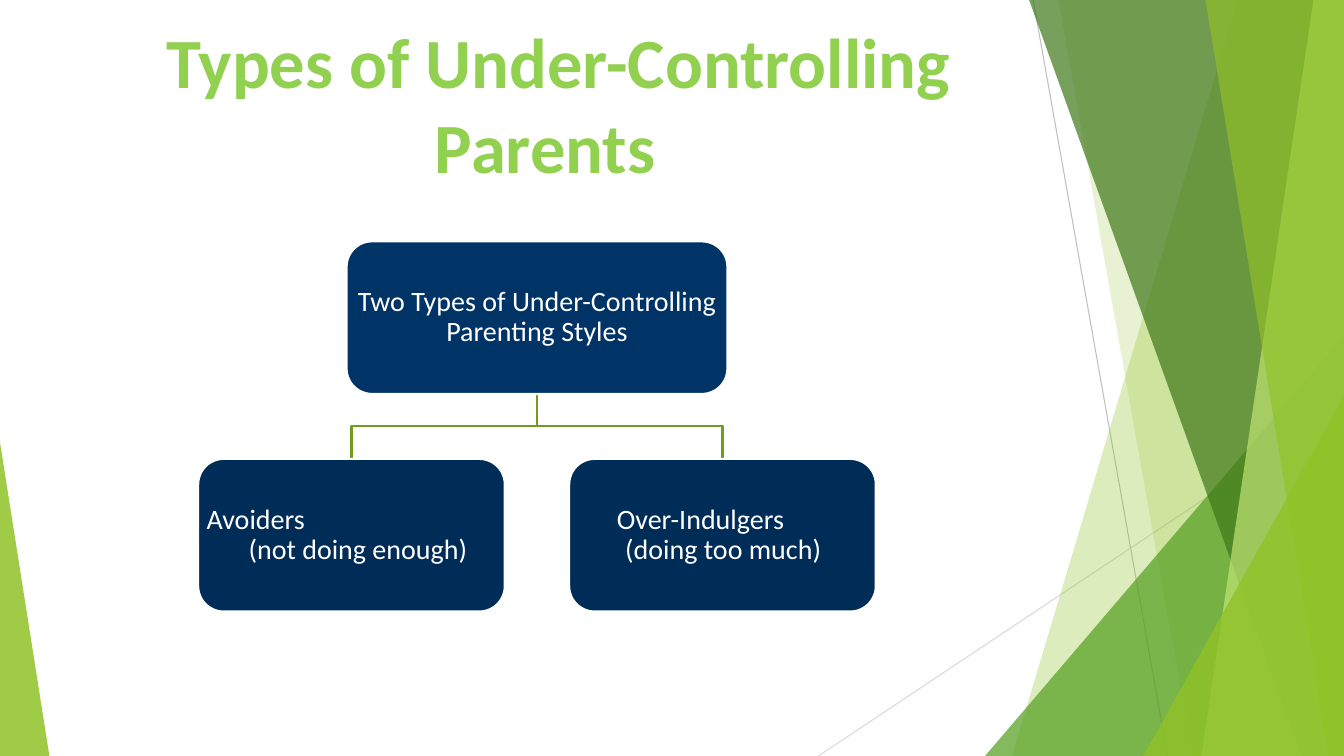
from lxml.etree import SubElement
from pptx import Presentation
from pptx.dml.color import RGBColor
from pptx.enum.shapes import MSO_CONNECTOR, MSO_SHAPE
from pptx.enum.text import MSO_ANCHOR, MSO_AUTO_SIZE, PP_ALIGN
from pptx.oxml.ns import qn
from pptx.util import Pt

WIDTH, HEIGHT = 960, 540
GREEN = "90C226"


def colour(value):
    return RGBColor.from_string(value)


def assign(target, values):
    for name, value in values.items():
        setattr(target, name, value)


class SlideBuilder:
    title_font = {"name": "Calibri", "size": Pt(50.4), "bold": True}
    label_font = {"name": "Calibri", "size": Pt(20), "bold": False}

    def __init__(self, page):
        self.page = page
        self.shapes = page.shapes

    def paint(self, shape, fill, opacity=100):
        shape.shadow.inherit = False
        shape.fill.solid()
        shape.fill.fore_color.rgb = colour(fill)
        shape.line.fill.background()
        if opacity < 100:
            tint = shape._element.spPr.find(qn("a:solidFill"))[0]
            SubElement(tint, qn("a:alpha"), val=str(opacity * 1000))

    def outline(self, points, close):
        corners = [(Pt(x), Pt(y)) for x, y in points]
        builder = self.shapes.build_freeform(*corners[0], scale=1.0)
        builder.add_line_segments(corners[1:], close=close)
        return builder.convert_to_shape()

    def band(self, top, bottom, fill, opacity):
        points = [(top, 0), (WIDTH, 0), (WIDTH, HEIGHT), (bottom, HEIGHT)]
        self.paint(self.outline(points, True), fill, opacity)

    def triangle(self, left, top, width, apex, fill, opacity):
        shape = self.shapes.add_shape(
            MSO_SHAPE.ISOSCELES_TRIANGLE, Pt(left), Pt(top), Pt(width), Pt(HEIGHT - top))
        shape.adjustments[0] = apex
        self.paint(shape, fill, opacity)

    def hairline(self, start, end, stroke):
        line = self.shapes.add_connector(
            MSO_CONNECTOR.STRAIGHT, *(Pt(value) for value in start + end))
        line.line.color.rgb = colour(stroke)
        line.line.width = Pt(0.75)
        SubElement(line._element.spPr, qn("a:effectLst"))

    def branch(self, points):
        shape = self.outline(points, False)
        shape.shadow.inherit = False
        shape.fill.background()
        shape.line.color.rgb = colour("739B1E")
        shape.line.width = Pt(1.5)

    def add_text(self, para, text, font, fill):
        span = para.add_run()
        span.text = text
        assign(span.font, font)
        span.font.color.rgb = colour(fill)

    def title(self, text, left, top, width, height, first_indent):
        box = self.shapes.title
        self.shapes._spTree.append(box._element)
        assign(box, {"left": Pt(left), "top": Pt(top),
                     "width": Pt(width), "height": Pt(height)})
        assign(box.text_frame, {"word_wrap": True, "auto_size": MSO_AUTO_SIZE.NONE,
                                "vertical_anchor": MSO_ANCHOR.TOP})
        para = box.text_frame.paragraphs[0]
        para.alignment = PP_ALIGN.CENTER
        para._p.get_or_add_pPr().set("indent", str(Pt(first_indent)))
        self.add_text(para, text, self.title_font, "92D050")

    def node(self, left, top, width, height, fill, lines, align):
        box = self.shapes.add_shape(
            MSO_SHAPE.FLOWCHART_ALTERNATE_PROCESS, Pt(left), Pt(top), Pt(width), Pt(height))
        self.paint(box, fill)
        box.line.color.rgb = colour("FFFFFF")
        box.line.width = Pt(1.5)
        frame = box.text_frame
        assign(frame, {"word_wrap": True, "vertical_anchor": MSO_ANCHOR.MIDDLE})
        assign(frame, {f"margin_{side}": Pt(0.72)
                       for side in ("left", "top", "right", "bottom")})
        for index, (text, indent) in enumerate(lines):
            para = frame.add_paragraph() if index else frame.paragraphs[0]
            assign(para, {"alignment": align, "line_spacing": 0.9})
            para._p.get_or_add_pPr().set("marL", str(Pt(indent)))
            self.add_text(para, text, self.label_font, "FFFFFF")


def main():
    deck = Presentation()
    deck.slide_width, deck.slide_height = Pt(WIDTH), Pt(HEIGHT)
    slide = SlideBuilder(deck.slides.add_slide(deck.slide_layouts[5]))

    slide.hairline((738, 0), (834, HEIGHT), "BFBFBF")
    slide.hairline((WIDTH, 290), (584.6, HEIGHT), "D9D9D9")
    slide.band(884.2, 722.9, GREEN, 30)
    slide.band(756, 851.8, GREEN, 20)
    slide.triangle(703.6, 240, 256.4, 1, "54A021", 72)
    slide.band(735.1, 929.5, "3F7819", 70)
    slide.band(938.2, 858.2, "C0E474", 70)
    slide.band(861.1, 949, GREEN, 65)
    slide.triangle(816.6, 283, 143.4, 1, GREEN, 80)
    slide.triangle(0, 316, 35.3, 0, GREEN, 85)

    slide.title("Types of Under-Controlling Parents", 30.2, 9.4, 718.6, 126, 18.8)

    root_centre, root_top, root_width, node_height = 383.6, 172.4, 272, 109
    child_top, child_width, child_offset = 327.8, 219, 132.5
    root_bottom = root_top + node_height
    middle = (root_bottom + child_top) / 2
    children = [
        (root_centre - child_offset, [("Avoiders", 0), ("(not doing enough)", 30)]),
        (root_centre + child_offset, [("Over-Indulgers", 28), ("(doing too much)", 34)]),
    ]
    for centre, lines in children:
        slide.branch([(root_centre, root_bottom), (root_centre, middle),
                      (centre, middle), (centre, child_top)])
    slide.node(root_centre - root_width / 2, root_top, root_width, node_height, "003366",
               [("Two Types of Under-Controlling Parenting Styles", 0)], PP_ALIGN.CENTER)
    for centre, lines in children:
        slide.node(centre - child_width / 2, child_top, child_width, node_height, "002C58",
                   lines, PP_ALIGN.LEFT)

    deck.save("out.pptx")


if __name__ == "__main__":
    main()
